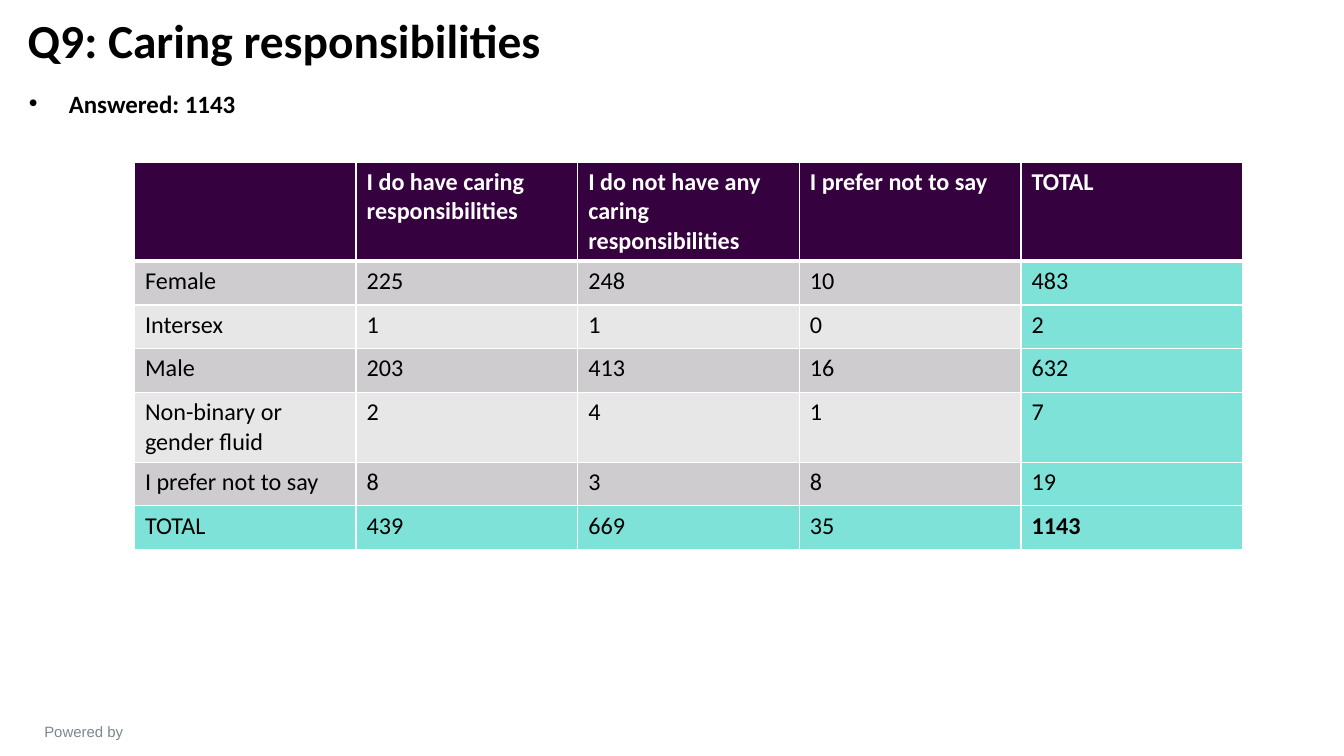
"""Build the slide on caring responsibilities by gender."""
from lxml import etree
from pptx import Presentation, util as u
from pptx.dml.color import RGBColor
from pptx.enum import text
from pptx.oxml.ns import qn

COLUMNS, ROWS = 1260, 709
CELL = u.Inches(0.01)
DARK, TEAL, WHITE, BLACK = "36013F", "7FE2D8", "FFFFFF", "000000"
BANDS = ["CECCCF", "E8E7E8"]


def rgb(value):
    return RGBColor.from_string(value)


def write(frame, words, format_values, **paragraph_values):
    frame.text = words
    frame.word_wrap = True
    paragraph = frame.paragraphs[0]
    for name, value in paragraph_values.items():
        setattr(paragraph, name, value)
    font = paragraph.runs[0].font if words else paragraph.font
    for name, value in format_values.items():
        if name == "color":
            font.color.rgb = rgb(value)
        else:
            setattr(font, name, value)


deck = Presentation()
deck.slide_width, deck.slide_height = COLUMNS * CELL, ROWS * CELL
slide = deck.slides.add_slide(deck.slide_layouts[1])
heading, answered = slide.placeholders
powered = slide.shapes.add_textbox(0, 0, CELL, CELL)

for part, grid in [
    (heading, (16, 11, 1134, 76)),
    (answered, (17, 86, 1134, 33)),
    (powered, (6, 672, 145, 22)),
]:
    part.left, part.top, part.width, part.height = [n * CELL for n in grid]
    part.text_frame.auto_size = text.MSO_AUTO_SIZE.NONE
    part.text_frame.vertical_anchor = text.MSO_ANCHOR.TOP

for side, inset in {"left": 13, "right": 13, "top": 6, "bottom": 6}.items():
    setattr(powered.text_frame, f"margin_{side}", inset * CELL)

bold_black = {"name": "Calibri", "bold": True, "color": BLACK}
write(heading.text_frame, "Q9: Caring responsibilities", bold_black | {"size": u.Pt(32)},
      alignment=text.PP_ALIGN.LEFT, line_spacing=0.9)

bullet = answered.text_frame.paragraphs[0]._p.get_or_add_pPr()
bullet.set("marL", "0")
bullet.set("indent", "0")
etree.SubElement(bullet, qn("a:buNone"))
write(answered.text_frame, "Answered: 1143", bold_black | {"size": u.Pt(16.8)},
      line_spacing=0.7, space_before=u.Pt(0))

write(powered.text_frame, "Powered by",
      {"name": "Arial", "size": u.Pt(10.1), "color": "7C878E"},
      alignment=text.PP_ALIGN.CENTER)

answers = [
    ["", "I do have caring responsibilities", "I do not have any caring responsibilities",
     "I prefer not to say", "TOTAL"],
    ["Female", "225", "248", "10", "483"],
    ["Intersex", "1", "1", "0", "2"],
    ["Male", "203", "413", "16", "632"],
    ["Non-binary or gender fluid", "2", "4", "1", "7"],
    ["I prefer not to say", "8", "3", "8", "19"],
    ["TOTAL", "439", "669", "35", "1143"],
]
last_row, last_column = len(answers) - 1, len(answers[0]) - 1
table = slide.shapes.add_table(
    len(answers), len(answers[0]), 126 * CELL, 152 * CELL, 1039 * CELL, 41 * len(answers) * CELL
).table
table.horz_banding = False

for r, answer in enumerate(answers):
    table.rows[r].height = 41 * CELL
    for c, words in enumerate(answer):
        cell = table.cell(r, c)
        is_total = r == last_row or c == last_column
        fill = DARK if r == 0 else TEAL if is_total else BANDS[(r - 1) % 2]
        write(cell.text_frame, words, {
            "name": "Calibri",
            "size": u.Pt(16.3),
            "bold": r == 0 or (r, c) == (last_row, last_column),
            "color": WHITE if r == 0 else BLACK,
        })
        cell.fill.solid()
        cell.fill.fore_color.rgb = rgb(fill)
        for place, side in enumerate("LRTB"):
            points = 3 if (r, side) in [(0, "B"), (1, "T")] else 1
            border = etree.Element(qn(f"a:ln{side}"), w=str(u.Pt(points)))
            paint = etree.SubElement(border, qn("a:solidFill"))
            etree.SubElement(paint, qn("a:srgbClr"), val=WHITE)
            cell._tc.get_or_add_tcPr().insert(place, border)

deck.save("out.pptx")
